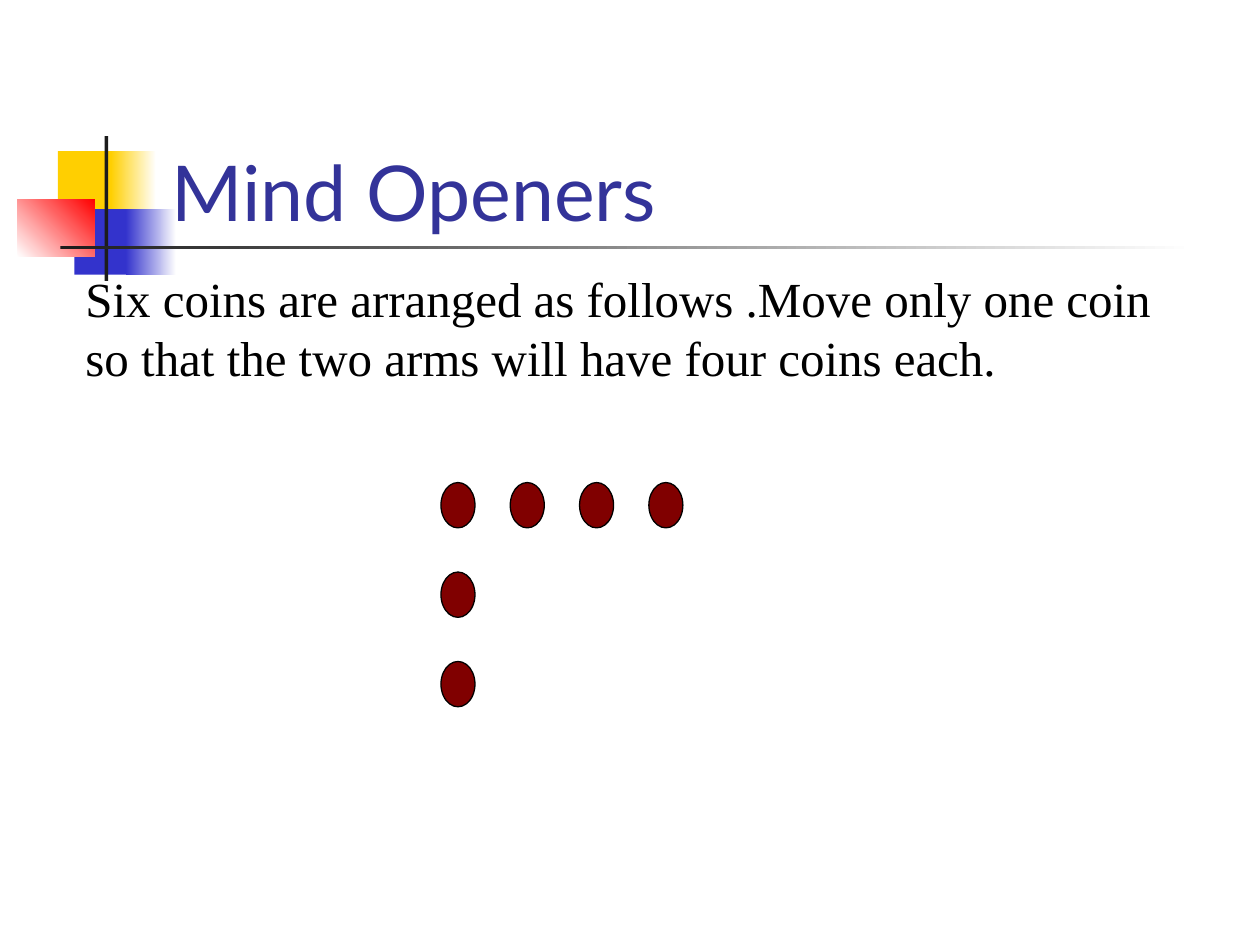
from pptx import Presentation
from pptx.dml.color import RGBColor
from pptx.enum.shapes import MSO_SHAPE
from pptx.enum.text import MSO_ANCHOR, MSO_AUTO_SIZE, PP_ALIGN
from pptx.util import Inches, Pt

COLORS = {
    "white": "FFFFFF",
    "black": "000000",
    "yellow": "FFCF01",
    "blue": "3333CC",
    "red": "FF0000",
    "charcoal": "1C1C1C",
    "title": "333399",
    "coin": "800000",
}


class SlideBuilder:
    """Hold the deck style and the current slide."""

    def __init__(self):
        self.deck = Presentation()
        self.deck.slide_width, self.deck.slide_height = Inches(10), Inches(7.5)
        self.page = self.deck.slides.add_slide(self.deck.slide_layouts[5])

    def color(self, name):
        return RGBColor.from_string(COLORS[name])

    def place(self, kind, bounds):
        shape = self.page.shapes.add_shape(kind, *map(Inches, bounds))
        shape.shadow.inherit = False
        shape.line.fill.background()
        return shape

    def block(self, bounds, fill):
        shape = self.place(MSO_SHAPE.RECTANGLE, bounds)
        shape.fill.solid()
        shape.fill.fore_color.rgb = self.color(fill)

    def fade(self, bounds, start, end, angle=0):
        fill = self.place(MSO_SHAPE.RECTANGLE, bounds).fill
        fill.gradient()
        fill.gradient_angle = angle
        for stop, name in zip(fill.gradient_stops, (start, end)):
            stop.color.rgb = self.color(name)

    def coin(self, left, top):
        shape = self.place(MSO_SHAPE.OVAL, (left, top, 0.27, 0.36))
        shape.fill.solid()
        shape.fill.fore_color.rgb = self.color("coin")
        shape.line.color.rgb = self.color("black")
        shape.line.width = Pt(0.75)

    def set_text(self, box, text, font, size, color):
        frame = box.text_frame
        frame.word_wrap = True
        frame.text = text
        paragraph = frame.paragraphs[0]
        paragraph.alignment = PP_ALIGN.LEFT
        paragraph.font.name = font
        paragraph.font.size = Pt(size)
        paragraph.font.color.rgb = self.color(color)
        return frame

    def title(self, bounds, text):
        box = self.page.shapes.title
        box.left, box.top, box.width, box.height = map(Inches, bounds)
        frame = self.set_text(box, text, "Lato", 44, "title")
        frame.vertical_anchor = MSO_ANCHOR.BOTTOM
        frame.auto_size = MSO_AUTO_SIZE.NONE
        box.element.getparent().append(box.element)

    def text(self, bounds, text):
        box = self.page.shapes.add_textbox(*map(Inches, bounds))
        frame = self.set_text(box, text, "Times New Roman", 28, "black")
        frame.auto_size = MSO_AUTO_SIZE.SHAPE_TO_FIT_TEXT


def main():
    slide = SlideBuilder()
    slide.block((0.46, 1.2, 0.48, 0.52), "yellow")
    slide.fade((0.88, 1.2, 0.36, 0.52), "yellow", "white")
    slide.block((0.59, 1.66, 0.46, 0.52), "blue")
    slide.fade((1, 1.66, 0.4, 0.52), "blue", "white")
    slide.fade((0.14, 1.58, 0.61, 0.46), "white", "red", 45)
    slide.block((0.83, 1.08, 0.03, 1.15), "charcoal")
    slide.fade((0.48, 1.95, 9, 0.03), "charcoal", "white")

    slide.title((1.26, 0.68, 8.52, 1.25), "Mind Openers")
    slide.text(
        (0.58, 2.08, 8.75, 1.03),
        "Six coins are arranged as follows .Move only one coin "
        "so that the two arms will have four coins each.",
    )

    left, top, column_step, row_step = 3.5, 3.83, 0.55, 0.71
    for column in range(4):
        slide.coin(left + column * column_step, top)
    for row in range(1, 3):
        slide.coin(left, top + row * row_step)

    slide.deck.save("out.pptx")


if __name__ == "__main__":
    main()
